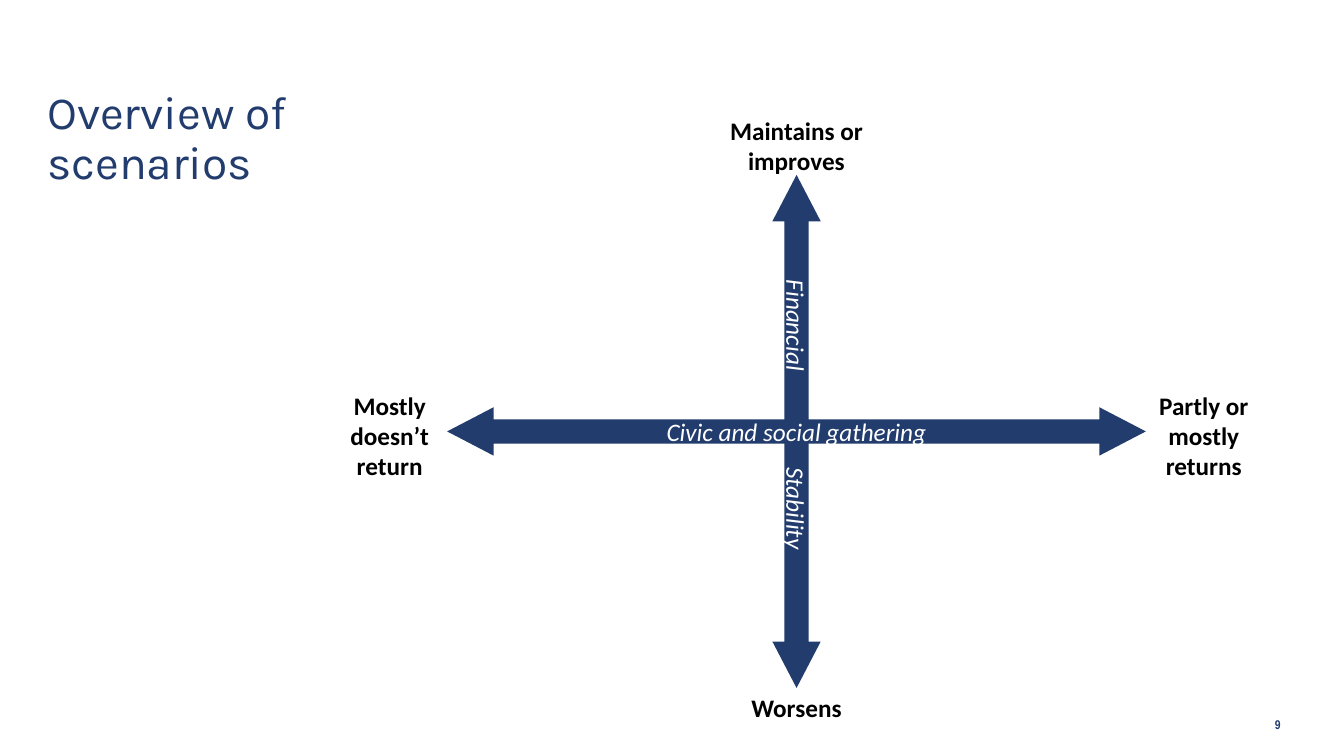
from dataclasses import dataclass

from lxml.etree import SubElement
from pptx import Presentation
from pptx.dml.color import RGBColor
from pptx.enum.shapes import MSO_SHAPE
from pptx.enum.text import MSO_ANCHOR, PP_ALIGN
from pptx.oxml.ns import qn
from pptx.slide import Slide
from pptx.text.text import TextFrame, _Paragraph
from pptx.util import Inches, Pt

COLORS = {"title": "223C6E", "arrow": "223C6D", "label": "000000", "axis": "FFFFFF"}
CENTER_X, CENTER_Y = 7.9, 4.28
ARROW_THICKNESS = 0.48


@dataclass(frozen=True)
class TextStyle:
    font: str
    size: float
    color: str
    bold: bool = False
    italic: bool = False
    align: PP_ALIGN = PP_ALIGN.CENTER


@dataclass(frozen=True)
class Label:
    text: str
    left: float
    top: float
    width: float
    height: float
    style: TextStyle
    anchor: MSO_ANCHOR = MSO_ANCHOR.TOP
    line_spacing: float = 1.0


@dataclass(frozen=True)
class Axis:
    text: str
    length: float
    style: TextStyle
    rotation: float = 0
    indent: float = 0
    tab_stop: float = 0


TITLE = TextStyle("Karla", 33, "title", align=PP_ALIGN.LEFT)
PAGE_NUMBER = TextStyle("Arial Narrow", 9, "title", bold=True, align=PP_ALIGN.RIGHT)
END_LABEL = TextStyle("Calibri", 18, "label", bold=True)
AXIS_CENTERED = TextStyle("Calibri", 18, "axis", italic=True)
AXIS_TABBED = TextStyle("Calibri", 18, "axis", italic=True, align=PP_ALIGN.LEFT)

AXES = [
    Axis("Financial\tStability", 5.09, AXIS_TABBED, 90, 0.81, 1.86),
    Axis("Civic and social gathering", 6.93, AXIS_CENTERED),
]

LABELS = [
    Label("Overview of scenarios", 0.37, 0.84, 4.31, 2.87, TITLE, line_spacing=0.9),
    Label("9", 12.05, 6.99, 0.75, 0.4, PAGE_NUMBER, MSO_ANCHOR.MIDDLE),
    Label("Worsens", 7.11, 6.82, 1.58, 0.4, END_LABEL),
    Label("Maintains or improves", 6.73, 1.09, 2.34, 0.71, END_LABEL),
    Label("Partly or mostly returns", 11.36, 3.82, 1.16, 1.01, END_LABEL),
    Label("Mostly doesn’t return", 3.27, 3.82, 1.19, 1.01, END_LABEL),
]


def write_text(frame: TextFrame, text: str, style: TextStyle) -> _Paragraph:
    frame.word_wrap = True
    para = frame.paragraphs[0]
    para.alignment = style.align
    span = para.add_run()
    span.text = text
    span.font.name = style.font
    span.font.size = Pt(style.size)
    span.font.bold = style.bold
    span.font.italic = style.italic
    span.font.color.rgb = RGBColor.from_string(COLORS[style.color])
    return para


def add_tab_stop(para: _Paragraph, position: float) -> None:
    stops = SubElement(para._p.get_or_add_pPr(), qn("a:tabLst"))
    SubElement(stops, qn("a:tab"), pos=str(Inches(position)), algn="l")


def draw_axis(page: Slide, axis: Axis) -> None:
    """Draw a double arrow centred on the crossing point."""
    arrow = page.shapes.add_shape(
        MSO_SHAPE.LEFT_RIGHT_ARROW,
        Inches(CENTER_X - axis.length / 2), Inches(CENTER_Y - ARROW_THICKNESS / 2),
        Inches(axis.length), Inches(ARROW_THICKNESS),
    )
    arrow.rotation = axis.rotation
    arrow.adjustments[0] = 0.5
    arrow.adjustments[1] = 0.96
    arrow.shadow.inherit = False
    arrow.fill.solid()
    arrow.fill.fore_color.rgb = RGBColor.from_string(COLORS["arrow"])
    arrow.line.fill.background()
    frame = arrow.text_frame
    frame.vertical_anchor = MSO_ANCHOR.MIDDLE
    frame.margin_left = Inches(axis.indent)
    frame.margin_right = 0
    para = write_text(frame, axis.text, axis.style)
    if axis.tab_stop:
        add_tab_stop(para, axis.tab_stop)


def draw_label(page: Slide, label: Label) -> None:
    box = page.shapes.add_textbox(
        Inches(label.left), Inches(label.top), Inches(label.width), Inches(label.height)
    )
    box.text_frame.vertical_anchor = label.anchor
    para = write_text(box.text_frame, label.text, label.style)
    para.line_spacing = label.line_spacing


def main() -> None:
    deck = Presentation()
    deck.slide_width, deck.slide_height = Inches(13.33), Inches(7.5)
    page = deck.slides.add_slide(deck.slide_layouts[6])
    for axis in AXES:
        draw_axis(page, axis)
    for label in LABELS:
        draw_label(page, label)
    deck.save("out.pptx")


if __name__ == "__main__":
    main()
